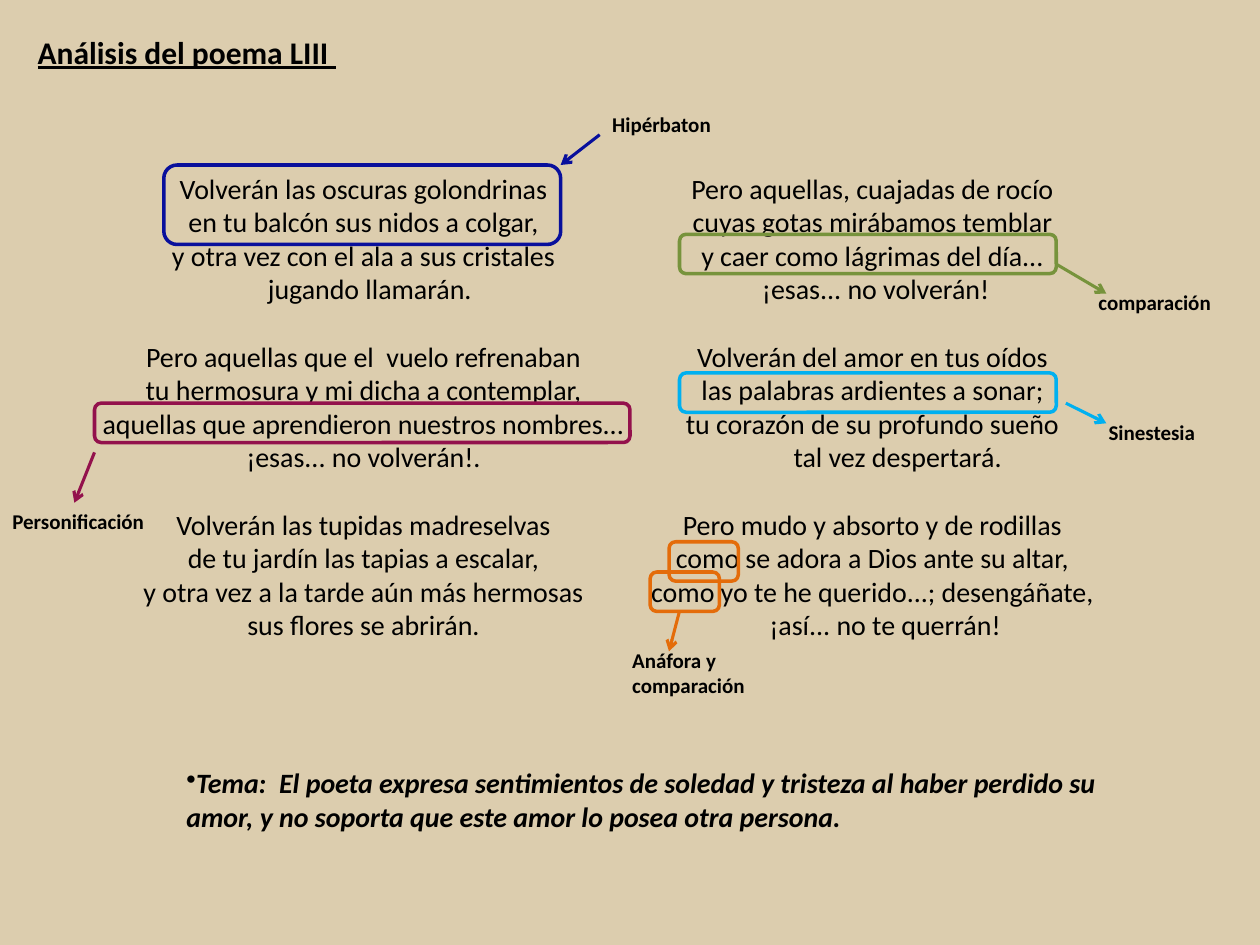
from lxml.etree import SubElement
from pptx import Presentation
from pptx.dml.color import RGBColor
from pptx.enum.shapes import MSO_CONNECTOR, MSO_SHAPE
from pptx.enum.text import MSO_AUTO_SIZE, PP_ALIGN
from pptx.oxml.ns import qn
from pptx.util import Pt

SAND = RGBColor(0xDC, 0xCD, 0xAE)
BLACK = RGBColor(0, 0, 0)
PLUM = RGBColor(0x93, 0x11, 0x4C)
GREEN = RGBColor(0x77, 0x93, 0x3C)
SKY = RGBColor(0x00, 0xB0, 0xF0)
ORANGE = RGBColor(0xE4, 0x6C, 0x0A)
NAVY = RGBColor(0x08, 0x0F, 0x9C)

VERSE = {"name": "Calibri", "size": Pt(16)}
LABEL = {"name": "Calibri", "size": Pt(12), "bold": True}
TITLE = {"name": "Calibri", "size": Pt(18), "bold": True, "underline": True}
THEME = {**VERSE, "bold": True, "italic": True}

# Each stanza: its first three lines, its last line, the indent of that line
LEFT = [
    ("Volverán las oscuras golondrinas\nen tu balcón sus nidos a colgar,\n"
     "y otra vez con el ala a sus cristales", "jugando llamarán.", 7.2),
    ("Pero aquellas que el  vuelo refrenaban\n"
     "tu hermosura y mi dicha a contemplar,\n"
     "aquellas que aprendieron nuestros nombres...",
     "¡esas... no volverán!.", 0),
    ("Volverán las tupidas madreselvas\nde tu jardín las tapias a escalar,\n"
     "y otra vez a la tarde aún más hermosas", "sus flores se abrirán.", 0),
]
RIGHT = [
    ("Pero aquellas, cuajadas de rocío\ncuyas gotas mirábamos temblar\n"
     "y caer como lágrimas del día...", "¡esas... no volverán!", 3.6),
    ("Volverán del amor en tus oídos\nlas palabras ardientes a sonar;\n"
     "tu corazón de su profundo sueño", "tal vez despertará.", 28.8),
    ("Pero mudo y absorto y de rodillas\n"
     "como se adora a Dios ante su altar,\n"
     "como yo te he querido...; desengáñate,", "¡así... no te querrán!", 14.4),
]

# Frames: colour, left, top, width, height
FRAMES = [
    (PLUM, 54, 230.4, 306, 22.5),
    (GREEN, 388.3, 133.9, 215.3, 22.5),
    (SKY, 388.3, 213.1, 215.3, 22.5),
    (ORANGE, 382.3, 309.6, 39.6, 22.5),
    (ORANGE, 371.5, 326.9, 39.6, 22.5),
    (NAVY, 93.6, 94.3, 226.8, 45.4),
]
# Arrows: colour, start, end
ARROWS = [
    (PLUM, 54, 258.5, 42.5, 287.3),
    (GREEN, 604, 151.2, 632.2, 167.8),
    (SKY, 609.1, 230.4, 632.2, 241.9),
    (ORANGE, 388.3, 349.2, 382.3, 372.2),
    (NAVY, 342.7, 77, 320.4, 94.3),
]
# Labels: text, left, top, width, height
LABELS = [
    ("Personificación", 0, 287.3, 96.5, 21.6),
    ("comparación", 620.6, 162, 79.2, 21.6),
    ("Sinestesia", 626.4, 236.2, 67.7, 21.6),
    ("Anáfora y  comparación", 354.2, 366.5, 84.2, 36),
    ("Hipérbaton", 342.7, 60.5, 85, 21.6),
]


def add_box(slide, left, top, width, height, wrap=True):
    box = slide.shapes.add_textbox(Pt(left), Pt(top), Pt(width), Pt(height))
    frame = box.text_frame
    frame.word_wrap = wrap
    frame.auto_size = MSO_AUTO_SIZE.SHAPE_TO_FIT_TEXT
    return frame


def fill_para(para, text, style):
    para.text = text
    for run in para.runs:
        for key, value in style.items():
            setattr(run.font, key, value)
        run.font.color.rgb = BLACK


def add_text(slide, text, style, *place, wrap=True):
    para = add_box(slide, *place, wrap=wrap).paragraphs[0]
    fill_para(para, text, style)
    return para


def add_verse(slide, stanzas, *place):
    frame = add_box(slide, *place)
    for i, (body, last, indent) in enumerate(stanzas):
        head = frame.add_paragraph() if i else frame.paragraphs[0]
        if i:
            head.space_before = Pt(19.2)
        tail = frame.add_paragraph()
        for para, text in ((head, body), (tail, last)):
            para.alignment = PP_ALIGN.CENTER
            fill_para(para, text, VERSE)
        # The margins shift the centred lines sideways
        head._p.get_or_add_pPr().set("marR", str(Pt(3.6)))
        tail._p.get_or_add_pPr().set("marL", str(Pt(indent)))


def add_frame(slide, color, *place):
    shape = slide.shapes.add_shape(MSO_SHAPE.ROUNDED_RECTANGLE,
                                   *(Pt(n) for n in place))
    shape.shadow.inherit = False
    shape.fill.background()
    shape.line.color.rgb = color
    shape.line.width = Pt(2)


def add_arrow(slide, color, *ends):
    arrow = slide.shapes.add_connector(MSO_CONNECTOR.STRAIGHT,
                                       *(Pt(n) for n in ends))
    arrow.line.color.rgb = color
    arrow.line.width = Pt(1.75)
    SubElement(arrow.line._get_or_add_ln(), qn("a:tailEnd"), type="arrow")
    SubElement(arrow._element.spPr, qn("a:effectLst"))


def main():
    deck = Presentation()
    deck.slide_width, deck.slide_height = Pt(720), Pt(540)
    slide = deck.slides.add_slide(deck.slide_layouts[6])
    slide.background.fill.solid()
    slide.background.fill.fore_color.rgb = SAND

    # Title and poem
    add_text(slide, "Análisis del poema LIII ", TITLE,
             14.4, 15.1, 185.8, 28.8, wrap=False)
    add_verse(slide, LEFT, 31, 94.3, 357.1, 278.6)
    add_verse(slide, RIGHT, 320.4, 94.3, 360, 278.6)

    # Figures of speech
    for item in FRAMES:
        add_frame(slide, *item)
    for item in ARROWS:
        add_arrow(slide, *item)
    for text, *place in LABELS:
        add_text(slide, text, LABEL, *place)

    # Theme of the poem
    theme = add_text(
        slide, "Tema:  El poeta expresa sentimientos de soledad y tristeza al "
        "haber perdido su amor, y no soporta que este amor lo posea otra "
        "persona.", THEME, 99.4, 434.2, 550.1, 46.1)
    SubElement(theme._p.get_or_add_pPr(), qn("a:buChar"), char="•")

    deck.save("out.pptx")


if __name__ == "__main__":
    main()
